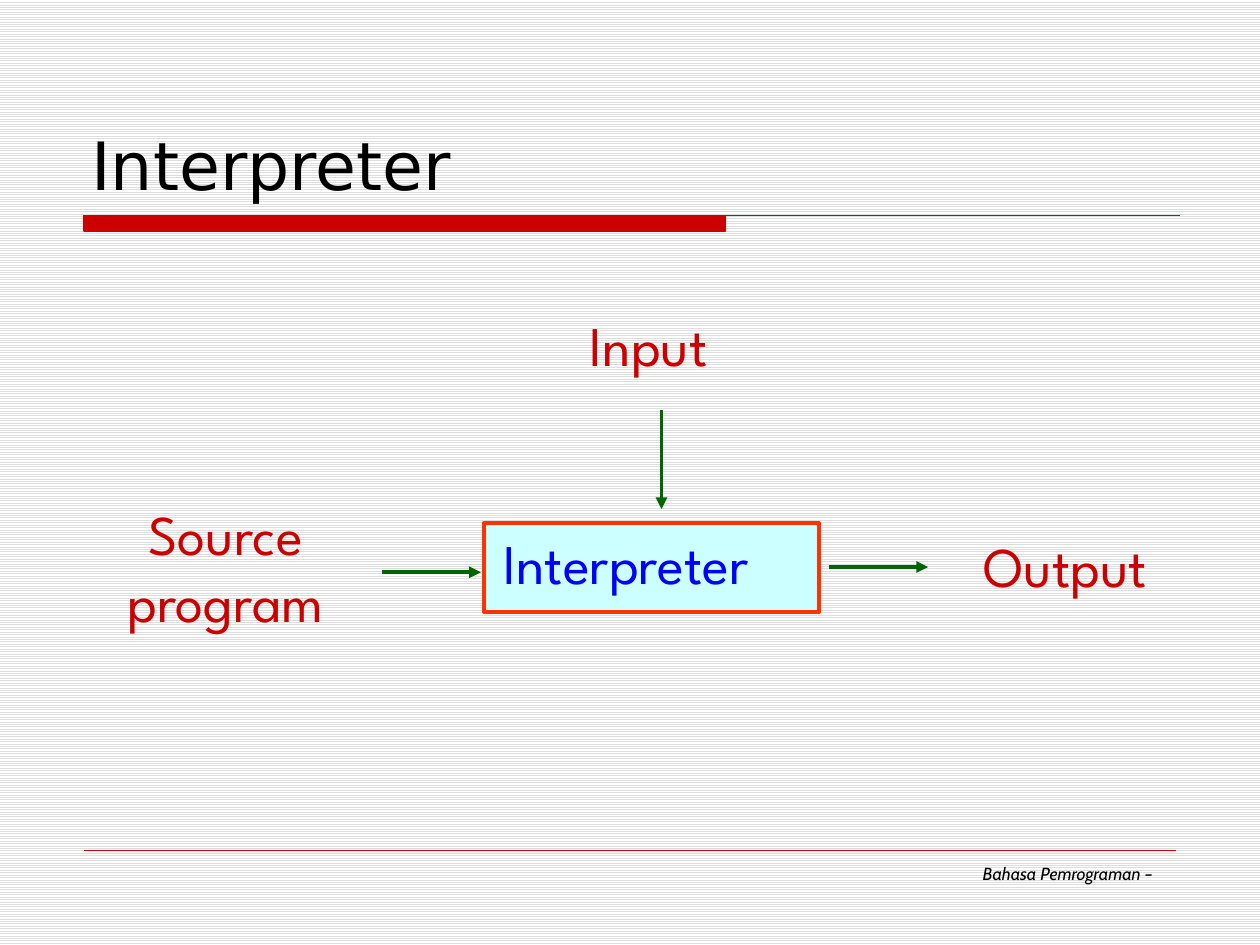
from dataclasses import dataclass

from lxml.etree import SubElement
from pptx import Presentation
from pptx.dml.color import RGBColor
from pptx.enum.dml import MSO_PATTERN
from pptx.enum.shapes import MSO_CONNECTOR, MSO_SHAPE
from pptx.enum.text import MSO_ANCHOR, MSO_AUTO_SIZE, PP_ALIGN
from pptx.oxml.ns import qn
from pptx.slide import Slide
from pptx.util import Inches, Length, Pt

BLACK = RGBColor(0x00, 0x00, 0x00)
WHITE = RGBColor(0xFF, 0xFF, 0xFF)
STRIPE = RGBColor(0xDD, 0xDD, 0xDD)
RED = RGBColor(0xCC, 0x00, 0x00)
ORANGE = RGBColor(0xFF, 0x33, 0x00)
CYAN = RGBColor(0xCC, 0xFF, 0xFF)
BLUE = RGBColor(0x00, 0x00, 0xFF)
GREEN = RGBColor(0x00, 0x66, 0x00)

COLUMNS, ROWS = 120, 90
WIDTH, HEIGHT = Inches(10), Inches(7.5)


@dataclass(frozen=True)
class Area:
    column: float
    row: float
    columns: float
    rows: float

    def lengths(self) -> tuple[Length, Length, Length, Length]:
        return across(self.column), down(self.row), across(self.columns), down(self.rows)


@dataclass(frozen=True)
class Label:
    lines: tuple[str, ...]
    area: Area
    color: RGBColor = RED
    align: PP_ALIGN = PP_ALIGN.CENTER


@dataclass(frozen=True)
class Line:
    start: tuple[float, float]
    end: tuple[float, float]
    color: RGBColor = GREEN
    width: float = 2.25
    arrow: bool = True


LABELS = (
    Label(("Source", "program"), Area(9, 47, 25, 14)),
    Label(("Output",), Area(91, 50, 20.9, 7.5)),
    Label(("Input",), Area(55, 29, 15.6, 7.5), align=PP_ALIGN.LEFT),
    Label(("Interpreter",), Area(46.8, 49.7, 29.3, 7.5), BLUE, PP_ALIGN.LEFT),
)
LINES = (
    Line((8, 81), (112, 81), RED, 0.25, arrow=False),
    Line((36.4, 54.5), (45.8, 54.5)),
    Line((79, 54), (88.4, 54)),
    Line((63, 39), (63, 48.5)),
)


def across(columns: float) -> Length:
    return Length(round(WIDTH * columns / COLUMNS))


def down(rows: float) -> Length:
    return Length(round(HEIGHT * rows / ROWS))


def add_span(para, text: str, font: str, size: float, color: RGBColor, italic: bool = False) -> None:
    span = para.add_run()
    span.text = text
    span.font.name = font
    span.font.size = Pt(size)
    span.font.color.rgb = color
    span.font.italic = italic


def add_title(page: Slide, text: str, area: Area) -> None:
    title = page.shapes.title
    title.left, title.top, title.width, title.height = area.lengths()
    frame = title.text_frame
    frame.vertical_anchor = MSO_ANCHOR.BOTTOM
    frame.auto_size = MSO_AUTO_SIZE.NONE
    para = frame.paragraphs[0]
    para.alignment = PP_ALIGN.LEFT
    add_span(para, text, "DejaVu Sans", 38, BLACK)


def add_title_bar(page: Slide) -> None:
    left, middle, right, top, bottom = across(8), across(69.1), across(112.4), down(20.5), down(22)
    builder = page.shapes.build_freeform(left, top)
    builder.add_line_segments([(middle, top), (middle, bottom), (left, bottom)], close=True)
    builder.move_to(left, top)
    builder.add_line_segments([(right, top)], close=False)
    bar = builder.convert_to_shape()
    bar.shadow.inherit = False
    bar.fill.solid()
    bar.fill.fore_color.rgb = RED
    bar.line.color.rgb = RED
    bar.line.width = Pt(0.75)


def add_process(page: Slide, area: Area) -> None:
    process = page.shapes.add_shape(MSO_SHAPE.RECTANGLE, *area.lengths())
    process.shadow.inherit = False
    process.fill.solid()
    process.fill.fore_color.rgb = CYAN
    process.line.color.rgb = ORANGE
    process.line.width = Pt(2.25)


def add_label(page: Slide, label: Label) -> None:
    frame = page.shapes.add_textbox(*label.area.lengths()).text_frame
    frame.word_wrap = False
    frame.auto_size = MSO_AUTO_SIZE.SHAPE_TO_FIT_TEXT
    for index, text in enumerate(label.lines):
        para = frame.add_paragraph() if index else frame.paragraphs[0]
        para.alignment = label.align
        add_span(para, text, "League Spartan", 32, label.color)


def add_line(page: Slide, line: Line) -> None:
    connector = page.shapes.add_connector(
        MSO_CONNECTOR.STRAIGHT,
        across(line.start[0]), down(line.start[1]),
        across(line.end[0]), down(line.end[1]),
    )
    connector.line.color.rgb = line.color
    connector.line.width = Pt(line.width)
    if line.arrow:
        SubElement(connector.line._get_or_add_ln(), qn("a:tailEnd"), type="triangle")
    SubElement(connector._element.spPr, qn("a:effectLst"))


def add_footer(page: Slide, text: str, area: Area) -> None:
    frame = page.shapes.add_textbox(*area.lengths()).text_frame
    frame.word_wrap = True
    frame.auto_size = MSO_AUTO_SIZE.SHAPE_TO_FIT_TEXT
    frame.margin_right = Inches(0.16)
    para = frame.paragraphs[0]
    para.alignment = PP_ALIGN.RIGHT
    para.line_spacing = 0.8
    para.space_before = Pt(2)
    add_span(para, text, "Cabin", 10, BLACK, italic=True)


def main() -> None:
    deck = Presentation()
    deck.slide_width, deck.slide_height = WIDTH, HEIGHT
    page = deck.slides.add_slide(deck.slide_layouts[5])

    # Striped background
    fill = page.background.fill
    fill.patterned()
    fill.pattern = MSO_PATTERN.LIGHT_HORIZONTAL
    fill.fore_color.rgb = STRIPE
    fill.back_color.rgb = WHITE

    # Heading
    add_title_bar(page)
    add_title(page, "Interpreter", Area(7.5, 4, 105, 16))

    # Process diagram and footer rule
    add_process(page, Area(46.1, 49.8, 31.9, 8.5))
    for label in LABELS:
        add_label(page, label)
    for line in LINES:
        add_line(page, line)

    # Footer
    add_footer(page, "Bahasa Pemrograman –", Area(8, 82, 103.7, 2.8))
    deck.save("out.pptx")


if __name__ == "__main__":
    main()
